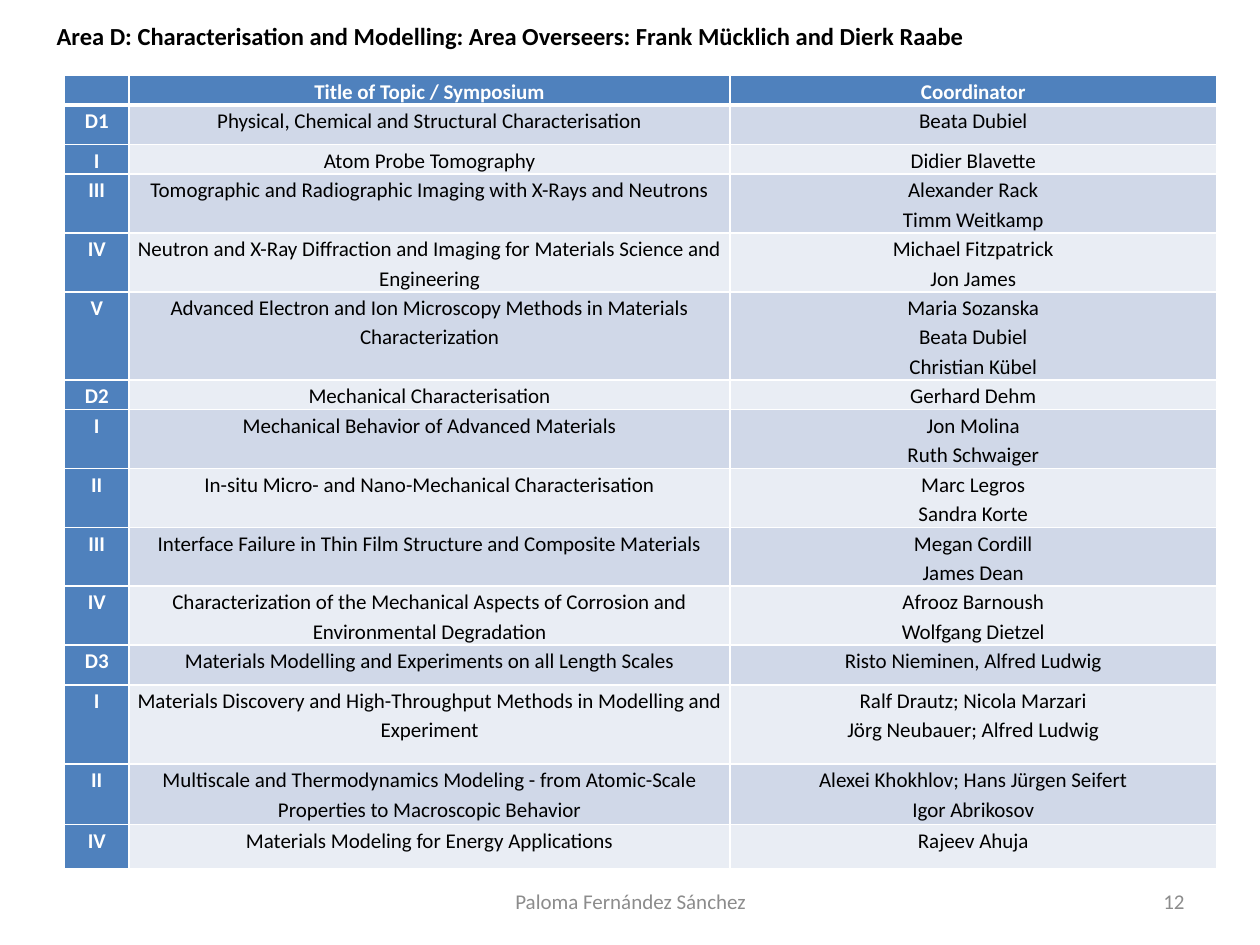
import pptx
import pptx.util
import pptx.dml.color
import pptx.enum.text
import pptx.oxml
import pptx.oxml.ns
import lxml.etree

Cm = pptx.util.Cm
Pt = pptx.util.Pt
RGBColor = pptx.dml.color.RGBColor
ALIGN = pptx.enum.text.PP_ALIGN

BLUE = RGBColor(0x4F, 0x81, 0xBD)
DARK_BAND = RGBColor(0xD0, 0xD8, 0xE8)
LIGHT_BAND = RGBColor(0xE9, 0xED, 0xF4)
WHITE = RGBColor(0xFF, 0xFF, 0xFF)
BLACK = RGBColor(0, 0, 0)
GREY = RGBColor(0x8C, 0x8C, 0x8C)

ONE_LINE, TWO_LINES, THREE_LINES = 0.58, 1.17, 1.75
COLUMN_WIDTHS = [1.3, 12.12, 9.8]
ROWS = [
    (ONE_LINE, "", "Title of Topic / Symposium", "Coordinator"),
    (0.8, "D1", "Physical, Chemical and Structural Characterisation", "Beata Dubiel"),
    (ONE_LINE, "I", "Atom Probe Tomography", "Didier Blavette"),
    (TWO_LINES, "III", "Tomographic and Radiographic Imaging with X-Rays and Neutrons",
     "Alexander Rack\vTimm Weitkamp"),
    (TWO_LINES, "IV", "Neutron and X-Ray Diffraction and Imaging for Materials Science and Engineering",
     "Michael Fitzpatrick\vJon James"),
    (THREE_LINES, "V", "Advanced Electron and Ion Microscopy Methods in Materials Characterization",
     "Maria Sozanska\vBeata Dubiel\nChristian Kübel"),
    (ONE_LINE, "D2", "Mechanical Characterisation", "Gerhard Dehm"),
    (TWO_LINES, "I", "Mechanical Behavior of Advanced Materials", "Jon Molina\vRuth Schwaiger"),
    (TWO_LINES, "II", "In-situ Micro- and Nano-Mechanical Characterisation", "Marc Legros\vSandra Korte"),
    (TWO_LINES, "III", "Interface Failure in Thin Film Structure and Composite Materials",
     "Megan Cordill\vJames Dean"),
    (TWO_LINES, "IV", "Characterization of the Mechanical Aspects of Corrosion and Environmental Degradation",
     "Afrooz Barnoush\vWolfgang Dietzel"),
    (0.8, "D3", "Materials Modelling and Experiments on all Length Scales", "Risto Nieminen, Alfred Ludwig"),
    (1.6, "I", "Materials Discovery and High-Throughput Methods in Modelling and Experiment",
     "Ralf Drautz; Nicola Marzari\vJörg Neubauer; Alfred Ludwig"),
    (1.22, "II", "Multiscale and Thermodynamics Modeling - from Atomic-Scale Properties to Macroscopic Behavior",
     "Alexei Khokhlov; Hans Jürgen Seifert\nIgor Abrikosov"),
    (0.88, "IV", "Materials Modeling for Energy Applications", "Rajeev Ahuja"),
]
TEXT_BOXES = [
    (0.89, 0.3, 22.2, 0.86, "Area D: Characterisation and Modelling: Area Overseers: Frank Mücklich and Dierk Raabe",
     14, True, BLACK, ALIGN.LEFT),
    (8.69, 17.65, 8.05, 1.02, "Paloma Fernández Sánchez", 12, False, GREY, ALIGN.CENTER),
    (18.21, 17.65, 5.92, 1.02, "12", 12, False, GREY, ALIGN.RIGHT),
]


def format_paragraph(paragraph, size, bold, color, alignment):
    paragraph.alignment = alignment
    paragraph.font.name = "Calibri"
    paragraph.font.size = Pt(size)
    paragraph.font.bold = bold
    paragraph.font.color.rgb = color


def add_border(cell, side, width):
    properties = cell._tc.get_or_add_tcPr()
    line = lxml.etree.SubElement(properties, pptx.oxml.ns.qn("a:" + side), w=str(Pt(width)))
    fill = lxml.etree.SubElement(line, pptx.oxml.ns.qn("a:solidFill"))
    lxml.etree.SubElement(fill, pptx.oxml.ns.qn("a:srgbClr"), val=str(WHITE))


presentation = pptx.Presentation()
presentation.slide_width = Cm(25.4)
presentation.slide_height = Cm(19.05)
slide = presentation.slides.add_slide(presentation.slide_layouts[6])

table = slide.shapes.add_table(
    len(ROWS), len(COLUMN_WIDTHS), Cm(1.3), Cm(1.52),
    Cm(sum(COLUMN_WIDTHS)), Cm(sum(row[0] for row in ROWS))).table
for column, width in zip(table.columns, COLUMN_WIDTHS):
    column.width = Cm(width)

for row_index, (height, *texts) in enumerate(ROWS):
    table.rows[row_index].height = Cm(height)
    for column_index, text in enumerate(texts):
        cell = table.cell(row_index, column_index)
        heading = row_index == 0 or column_index == 0
        cell.margin_left = cell.margin_right = Cm(0.15)
        cell.margin_top = cell.margin_bottom = 0
        for side in ("lnL", "lnR", "lnT", "lnB"):
            thick = (row_index, side) in ((0, "lnB"), (1, "lnT"))
            add_border(cell, side, 3 if thick else 1)
        cell.fill.solid()
        cell.fill.fore_color.rgb = BLUE if heading else DARK_BAND if row_index % 2 else LIGHT_BAND
        cell.text_frame.text = text
        for paragraph in cell.text_frame.paragraphs:
            format_paragraph(paragraph, 12, heading, WHITE if heading else BLACK, ALIGN.CENTER)
            paragraph.line_spacing = 1.15

for left, top, width, height, text, size, bold, color, alignment in TEXT_BOXES:
    shape = slide.shapes.add_textbox(Cm(left), Cm(top), Cm(width), Cm(height))
    shape.text_frame.word_wrap = True
    shape.text_frame.vertical_anchor = pptx.enum.text.MSO_ANCHOR.MIDDLE
    shape.text_frame.text = text
    format_paragraph(shape.text_frame.paragraphs[0], size, bold, color, alignment)

presentation.save("out.pptx")
